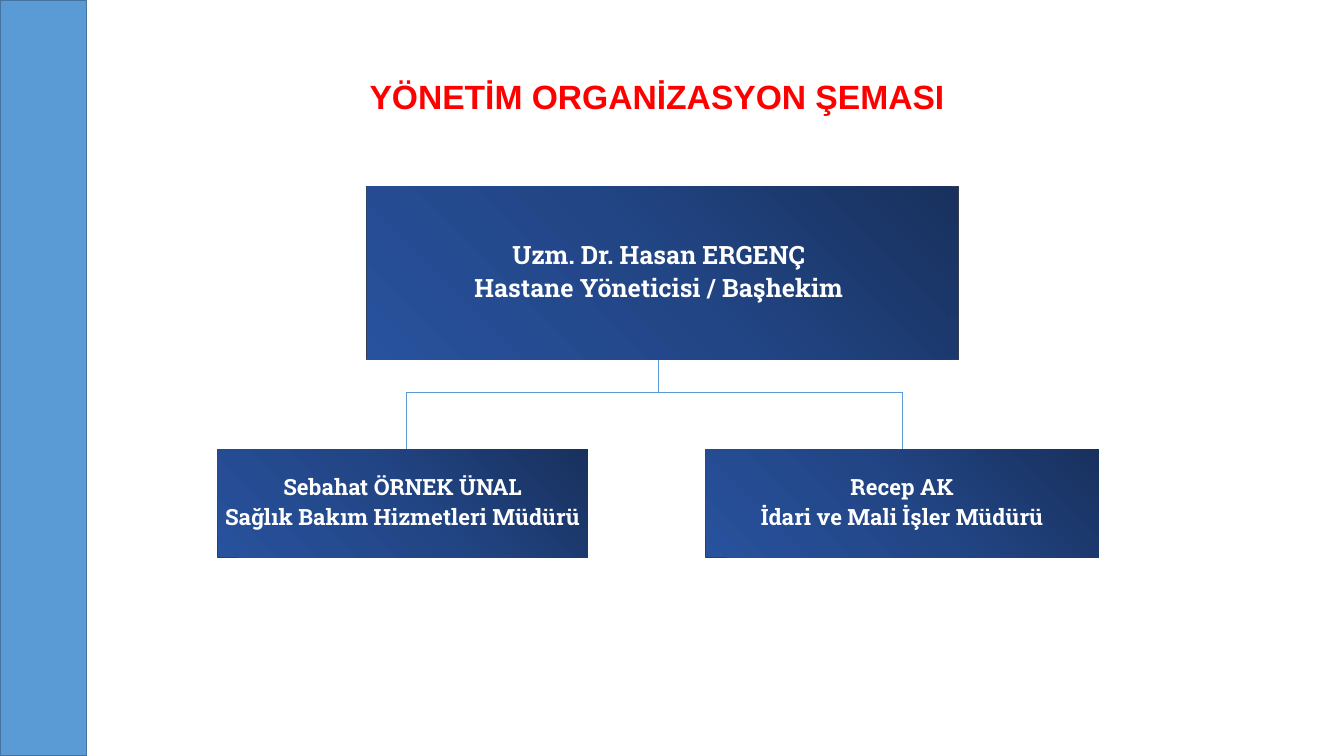
"""Builds a one-page hospital management organisation chart."""
from dataclasses import dataclass
from typing import Optional

from lxml.etree import SubElement
from pptx import Presentation
from pptx.dml.color import RGBColor
from pptx.enum.shapes import MSO_CONNECTOR as Connector, MSO_SHAPE as Shape
from pptx.enum.text import MSO_ANCHOR as Anchor, MSO_AUTO_SIZE as AutoSize, PP_ALIGN as Align
from pptx.oxml.ns import qn
from pptx.util import Pt

SKY = RGBColor(0x5B, 0x9B, 0xD5)
SKY_EDGE = RGBColor(0x43, 0x73, 0x9E)
SLATE = RGBColor(0x33, 0x3F, 0x50)
RED = RGBColor(0xFF, 0x00, 0x00)
WHITE = RGBColor(0xFF, 0xFF, 0xFF)
GRADIENT = {
    0: RGBColor(0x18, 0x31, 0x5E),
    50: RGBColor(0x22, 0x45, 0x85),
    100: RGBColor(0x28, 0x52, 0x9E),
}
BUS_Y = 280
LEFT_X, STEM_X, RIGHT_X = 290.2, 470.5, 644.4


@dataclass(frozen=True)
class Post:
    """A post on the chart: a frame, and a panel that holds the text."""
    lines: tuple[str, ...]
    left: float
    top: float
    width: float
    height: float
    size: float
    panel_width: float


@dataclass(frozen=True)
class Link:
    """A straight line that may be joined to the panel of a post."""
    start: tuple[float, float]
    end: tuple[float, float]
    begin_post: Optional[int] = None
    end_post: Optional[int] = None


POSTS = (
    Post(("Uzm. Dr. Hasan ERGENÇ", "Hastane Yöneticisi / Başhekim"),
         262, 133.2, 422.6, 123.8, 18, 417),
    Post(("Sebahat ÖRNEK ÜNAL", "Sağlık Bakım Hizmetleri Müdürü"),
         155.5, 321, 264.2, 77, 16, 264.2),
    Post(("Recep AK", "İdari ve Mali İşler Müdürü"),
         504, 321, 280.8, 77, 16, 280.8),
)
LINKS = (
    Link((STEM_X, 257), (STEM_X, BUS_Y), begin_post=0),
    Link((RIGHT_X, BUS_Y), (STEM_X, BUS_Y)),
    Link((STEM_X, BUS_Y), (LEFT_X, BUS_Y)),
    Link((LEFT_X, BUS_Y), (LEFT_X, 321)),
    Link((RIGHT_X, BUS_Y), (RIGHT_X, 321), end_post=2),
)


def add_box(page, left: float, top: float, width: float, height: float,
            fill: Optional[RGBColor] = None, edge: Optional[RGBColor] = None):
    """Add a rectangle, with the chart's gradient when no fill is given."""
    box = page.shapes.add_shape(Shape.RECTANGLE, Pt(left), Pt(top), Pt(width), Pt(height))
    box.shadow.inherit = False
    if fill is None:
        shade(box)
    else:
        box.fill.solid()
        box.fill.fore_color.rgb = fill
    if edge is None:
        box.line.fill.background()
    else:
        box.line.color.rgb = edge
        box.line.width = Pt(1)
    return box


def shade(box) -> None:
    """Fill a box with a round gradient centred on its top right corner."""
    box.fill.gradient()
    gradient = box._element.spPr.find(qn("a:gradFill"))
    for child in list(gradient):
        gradient.remove(child)
    stops = SubElement(gradient, qn("a:gsLst"))
    for percent, color in GRADIENT.items():
        stop = SubElement(stops, qn("a:gs"), pos=str(percent * 1000))
        SubElement(stop, qn("a:srgbClr"), val=str(color))
    course = SubElement(gradient, qn("a:path"), path="circle")
    SubElement(course, qn("a:fillToRect"), l="100000", b="100000")


def write(para, text: str, *, font: str, size: float, color: RGBColor,
          align: Align = Align.LEFT, spacing: float = 1.0, after: float = 0) -> None:
    """Write bold text into a paragraph."""
    para.alignment = align
    para.line_spacing = spacing
    para.space_after = Pt(after)
    span = para.add_run()
    span.text = text
    span.font.name = font
    span.font.size = Pt(size)
    span.font.bold = True
    span.font.color.rgb = color


def set_frame(frame, anchor: Anchor, margin: float) -> None:
    """Set the anchor and equal margins of a text frame."""
    frame.word_wrap = True
    frame.auto_size = AutoSize.NONE
    frame.vertical_anchor = anchor
    frame.margin_left = frame.margin_right = Pt(margin)
    frame.margin_top = frame.margin_bottom = Pt(margin)


def add_title(page, text: str) -> None:
    """Place and write the page title."""
    title = page.shapes.title
    title.left, title.top, title.width, title.height = Pt(264), Pt(48), Pt(471), Pt(41)
    set_frame(title.text_frame, Anchor.MIDDLE, 0)
    write(title.text_frame.paragraphs[0], text, font="Arial", size=24, color=RED)


def add_post(page, post: Post):
    """Draw a post and return its panel."""
    add_box(page, post.left, post.top, post.width, post.height, edge=SLATE)
    panel = add_box(page, post.left, post.top, post.panel_width, post.height)
    frame = panel.text_frame
    set_frame(frame, Anchor.MIDDLE, 0.7)
    for index, line in enumerate(post.lines):
        para = frame.add_paragraph() if index else frame.paragraphs[0]
        write(para, line, font="Roboto Slab", size=post.size, color=WHITE,
              align=Align.CENTER, spacing=0.9, after=post.size * 0.24)
    return panel


def add_link(page, link: Link, panels: list) -> None:
    """Draw a link and join it to its posts."""
    line = page.shapes.add_connector(
        Connector.STRAIGHT, *(Pt(value) for value in link.start + link.end))
    line.line.color.rgb = SKY
    line.line.width = Pt(0.5)
    SubElement(line._element.spPr, qn("a:effectLst"))
    if link.begin_post is not None:
        line.begin_connect(panels[link.begin_post], 2)
    if link.end_post is not None:
        line.end_connect(panels[link.end_post], 0)


def main() -> None:
    """Build and save the deck."""
    deck = Presentation()
    deck.slide_width, deck.slide_height = Pt(960), Pt(540)
    page = deck.slides.add_slide(deck.slide_layouts[5])
    add_box(page, 0, 0.5, 62, 539.5, fill=SKY, edge=SKY_EDGE)
    add_title(page, "YÖNETİM ORGANİZASYON ŞEMASI")
    panels = [add_post(page, post) for post in POSTS]
    for link in LINKS:
        add_link(page, link, panels)
    deck.save("out.pptx")


if __name__ == "__main__":
    main()
